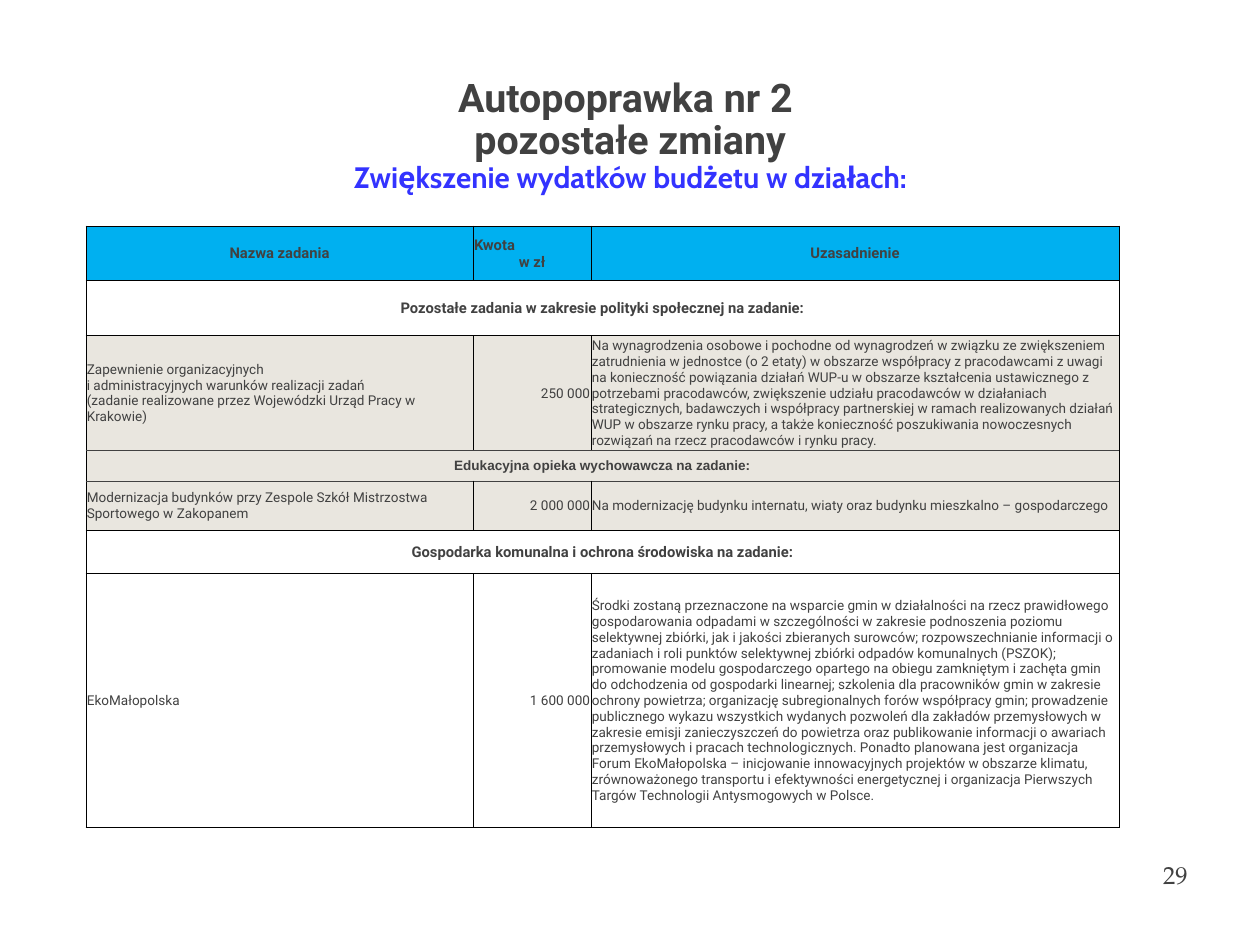
from dataclasses import dataclass
from typing import Any, Optional

from lxml.etree import SubElement
from pptx import Presentation
from pptx.dml.color import RGBColor
from pptx.enum.text import MSO_ANCHOR as Anchor, PP_ALIGN as Align
from pptx.oxml.ns import qn
from pptx.util import Inches, Pt

DARK = RGBColor(0x41, 0x41, 0x41)
BLACK = RGBColor(0x00, 0x00, 0x00)
BLUE = RGBColor(0x33, 0x33, 0xFF)
HEADER_BLUE = RGBColor(0x00, 0xB0, 0xF0)
SAND = RGBColor(0xE9, 0xE6, 0xDF)

LEFT, CENTER, RIGHT = Align.LEFT, Align.CENTER, Align.RIGHT
TASK = {"name": "Roboto", "size": Pt(11), "bold": False}
HEADING = {"name": "Roboto", "size": Pt(12), "bold": True}
ARIAL_HEADING = {"name": "Arial", "size": Pt(11), "bold": True}
TITLE = {"name": "Roboto", "size": Pt(32), "bold": True}
SUBTITLE = {"name": "Cabin", "size": Pt(24), "bold": True}
PAGE_NUMBER = {"name": "TeX Gyre Pagella", "size": Pt(20), "bold": False}
CELL_FORMAT = {
    "margin_left": Inches(0.01), "margin_right": Inches(0.01),
    "margin_top": Inches(0.01), "margin_bottom": 0,
    "vertical_anchor": Anchor.MIDDLE,
}


@dataclass(frozen=True)
class Line:
    color: RGBColor
    points: float


THIN, GREY = Line(BLACK, 0.5), Line(DARK, 1)


@dataclass(frozen=True)
class Entry:
    text: str
    align: Align = LEFT


@dataclass(frozen=True)
class BudgetRow:
    """One table row; a single cell spans the whole width."""
    height: float
    cells: tuple[tuple[Entry, ...], ...]
    font: dict[str, Any]
    fill: Optional[RGBColor] = None
    top: Line = THIN
    bottom: Line = THIN


def section(title: str) -> tuple[tuple[Entry, ...], ...]:
    return ((Entry(title, CENTER),),)


def task(name: tuple[str, ...], amount: str,
         reasons: tuple[str, ...]) -> tuple[tuple[Entry, ...], ...]:
    """Return the three cells of a task; its reasons form one paragraph."""
    return (tuple(Entry(part) for part in name), (Entry(amount, RIGHT),),
            (Entry(" ".join(reasons)),))


COLUMN_WIDTHS = (4.37, 1.33, 5.96)
BUDGET_ROWS = (
    BudgetRow(0.62, ((Entry("Nazwa zadania", CENTER),),
                     (Entry("Kwota"), Entry("w zł", CENTER)),
                     (Entry("Uzasadnienie", CENTER),)), HEADING, HEADER_BLUE),
    BudgetRow(0.62, section("Pozostałe zadania w zakresie polityki społecznej na zadanie:"), HEADING),
    BudgetRow(1.26, task(
        ("Zapewnienie organizacyjnych \ni administracyjnych warunków realizacji zadań",
         "(zadanie realizowane przez Wojewódzki Urząd Pracy w Krakowie)"),
        "250 000",
        ("Na wynagrodzenia osobowe i pochodne od wynagrodzeń w związku ze zwiększeniem",
         "zatrudnienia w jednostce (o 2 etaty) w obszarze współpracy z pracodawcami z uwagi",
         "na konieczność powiązania działań WUP-u w obszarze kształcenia ustawicznego z",
         "potrzebami pracodawców, zwiększenie udziału pracodawców w działaniach",
         "strategicznych, badawczych i współpracy partnerskiej w ramach realizowanych działań",
         "WUP w obszarze rynku pracy, a także konieczność poszukiwania nowoczesnych",
         "rozwiązań na rzecz pracodawców i rynku pracy.")), TASK, SAND, bottom=GREY),
    BudgetRow(0.35, section("Edukacyjna opieka wychowawcza na zadanie:"),
              ARIAL_HEADING, SAND, GREY, GREY),
    BudgetRow(0.55, task(
        ("Modernizacja budynków przy Zespole Szkół Mistrzostwa Sportowego w Zakopanem",),
        "2 000 000",
        ("Na modernizację budynku internatu, wiaty oraz budynku mieszkalno – gospodarczego",)),
        TASK, SAND, top=GREY),
    BudgetRow(0.49, section("Gospodarka komunalna i ochrona środowiska na zadanie:"), HEADING),
    BudgetRow(2.87, task(
        ("EkoMałopolska",),
        "1 600 000",
        ("Środki zostaną przeznaczone na wsparcie gmin w działalności na rzecz prawidłowego",
         "gospodarowania odpadami w szczególności w zakresie podnoszenia poziomu",
         "selektywnej zbiórki, jak i jakości zbieranych surowców; rozpowszechnianie informacji o",
         "zadaniach i roli punktów selektywnej zbiórki odpadów komunalnych (PSZOK);",
         "promowanie modelu gospodarczego opartego na obiegu zamkniętym i zachęta gmin",
         "do odchodzenia od gospodarki linearnej; szkolenia dla pracowników gmin w zakresie",
         "ochrony powietrza; organizację subregionalnych forów współpracy gmin; prowadzenie",
         "publicznego wykazu wszystkich wydanych pozwoleń dla zakładów przemysłowych w",
         "zakresie emisji zanieczyszczeń do powietrza oraz publikowanie informacji o awariach",
         "przemysłowych i pracach technologicznych. Ponadto planowana jest organizacja",
         "Forum EkoMałopolska – inicjowanie innowacyjnych projektów w obszarze klimatu,",
         "zrównoważonego transportu i efektywności energetycznej i organizacja Pierwszych",
         "Targów Technologii Antysmogowych w Polsce.")), TASK),
)


def apply_format(target: Any, values: dict[str, Any]) -> None:
    for attribute, value in values.items():
        setattr(target, attribute, value)


def style_font(font: Any, values: dict[str, Any], color: RGBColor = DARK) -> None:
    apply_format(font, values)
    font.color.rgb = color


def draw_borders(cell: Any, top: Line, bottom: Line) -> None:
    properties = cell._tc.get_or_add_tcPr()
    for side, line in (("L", THIN), ("R", THIN), ("T", top), ("B", bottom)):
        border = SubElement(properties, qn(f"a:ln{side}"), w=str(Pt(line.points)))
        solid = SubElement(border, qn("a:solidFill"))
        SubElement(solid, qn("a:srgbClr"), val=str(line.color))


def write_entries(cell: Any, entries: tuple[Entry, ...], font: dict[str, Any]) -> None:
    frame = cell.text_frame
    for index, entry in enumerate(entries):
        paragraph = frame.add_paragraph() if index else frame.paragraphs[0]
        paragraph.text = entry.text
        paragraph.alignment = entry.align
        for run in paragraph.runs:
            style_font(run.font, font)


def add_budget_table(slide: Any) -> None:
    heights = [row.height for row in BUDGET_ROWS]
    table = slide.shapes.add_table(
        len(heights), len(COLUMN_WIDTHS), Inches(0.97), Inches(2.55),
        Inches(sum(COLUMN_WIDTHS)), Inches(sum(heights))).table
    apply_format(table, {"first_row": False, "horz_banding": False})
    for column, width in zip(table.columns, COLUMN_WIDTHS):
        column.width = Inches(width)
    for row, budget_row in zip(table.rows, BUDGET_ROWS):
        row.height = Inches(budget_row.height)
        cells = list(row.cells)
        for cell in cells:
            apply_format(cell, CELL_FORMAT)
            draw_borders(cell, budget_row.top, budget_row.bottom)
            if budget_row.fill is None:
                cell.fill.background()
            else:
                cell.fill.solid()
                cell.fill.fore_color.rgb = budget_row.fill
        if len(budget_row.cells) == 1:
            cells[0].merge(cells[-1])
        for cell, entries in zip(cells, budget_row.cells):
            write_entries(cell, entries, budget_row.font)


def add_centered_box(slide: Any, place: tuple[float, ...], margin: float) -> Any:
    """Add a text box and return its centred first paragraph."""
    frame = slide.shapes.add_textbox(*map(Inches, place)).text_frame
    sides = ("left", "top", "right", "bottom")
    apply_format(frame, {f"margin_{side}": Inches(margin) for side in sides})
    apply_format(frame, {"word_wrap": True, "vertical_anchor": Anchor.MIDDLE})
    paragraph = frame.paragraphs[0]
    paragraph.alignment = CENTER
    return paragraph


def add_title(slide: Any) -> None:
    title = add_centered_box(slide, (0.56, 0.88, 13.11, 1.33), 0)
    title.line_spacing = 0.9
    lines = (("Autopoprawka nr 2 ", TITLE, DARK), ("pozostałe zmiany", TITLE, DARK),
             ("Zwiększenie wydatków budżetu w działach:", SUBTITLE, BLUE))
    for index, (text, font, color) in enumerate(lines):
        if index:
            title.add_line_break()
        run = title.add_run()
        run.text = text
        style_font(run.font, font, color)


def add_page_number(slide: Any) -> None:
    number = add_centered_box(slide, (12.86, 9.65, 0.81, 0.45), 0.06).add_run()
    number.text = "29"
    style_font(number.font, PAGE_NUMBER)


def main() -> None:
    deck = Presentation()
    apply_format(deck, {"slide_width": Inches(14.22), "slide_height": Inches(10.67)})
    slide = deck.slides.add_slide(deck.slide_layouts[6])
    add_page_number(slide)
    add_title(slide)
    add_budget_table(slide)
    deck.save("out.pptx")


if __name__ == "__main__":
    main()
